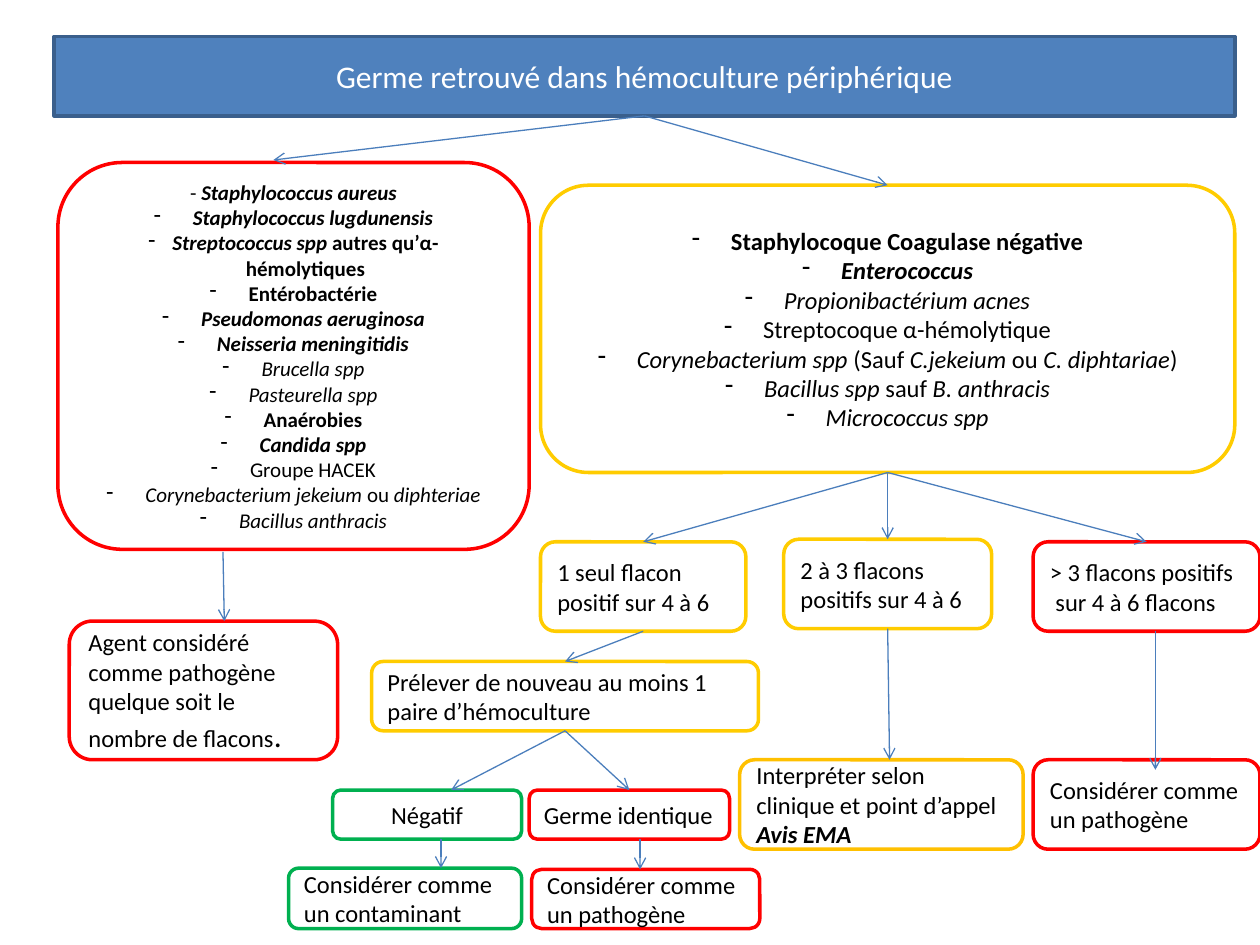
from collections import namedtuple
from lxml import etree
from pptx import Presentation
from pptx import util as u
from pptx.dml.color import RGBColor
from pptx.enum import shapes, text
from pptx.oxml.ns import qn

FONT = "Calibri"
BLUE, NAVY, ARROW = "4F81BD", "3A5F8C", "4B7EBC"
RED, YELLOW, AMBER, GREEN = "FF0000", "FFCC00", "FFC000", "00B050"
BLACK, WHITE = "000000", "FFFFFF"

Box = namedtuple("Box", "left top width height")

# Every paragraph is a list of (words, style); b is bold, i is italic
PATHOGENS = [
    [("- ", ""), ("Staphylococcus aureus", "bi")],
    [("Staphylococcus lugdunensis", "bi")],
    [("Streptococcus spp ", "bi"), ("autres qu’α-hémolytiques", "b")],
    [("Entérobactérie", "b")],
    [("Pseudomonas aeruginosa", "bi")],
    [("Neisseria meningitidis", "bi")],
    [("Brucella spp", "i")],
    [("Pasteurella spp", "i")],
    [("Anaérobies", "b")],
    [("Candida spp", "bi")],
    [("Groupe HACEK", "")],
    [("Corynebacterium jekeium ", "i"), ("ou ", ""), ("diphteriae", "i")],
    [("Bacillus anthracis", "i")],
]
PATHOGEN_INDENTS = [0, 0.31, 0.19] + [0.31] * 10
DOUBTFUL = [
    [("Staphylocoque Coagulase négative", "b")],
    [("Enterococcus", "bi")],
    [("Propionibactérium acnes", "i")],
    [("Streptocoque α-hémolytique", "")],
    [("Corynebacterium spp ", "i"), ("(Sauf ", ""), ("C.jekeium", "i"),
     (" ou ", ""), ("C. diphtariae", "i"), (")", "")],
    [("Bacillus spp ", "i"), ("sauf ", ""), ("B. anthracis", "i")],
    [("Micrococcus spp", "i")],
]


def colour(value):
    return RGBColor.from_string(value)


def emu(*lengths):
    return [u.Inches(length) for length in lengths]


def paint(shape, fill, line):
    shape.fill.solid()
    shape.fill.fore_color.rgb = colour(fill)
    shape.line.color.rgb = colour(line)
    shape.line.width = u.Pt(2)


def write(frame, paragraphs, size, ink=BLACK, centred=False):
    frame.word_wrap = True
    frame.vertical_anchor = text.MSO_ANCHOR.MIDDLE
    for index, parts in enumerate(paragraphs):
        para = frame.add_paragraph() if index else frame.paragraphs[0]
        para.alignment = text.PP_ALIGN.CENTER if centred else text.PP_ALIGN.LEFT
        para.font.name = FONT
        para.font.size = u.Pt(size)
        para.font.color.rgb = colour(ink)
        for words, style in parts:
            span = para.add_run()
            span.text = words
            if "b" in style:
                span.font.bold = True
            if "i" in style:
                span.font.italic = True


def header(page, box, words):
    title = page.shapes.title
    title.left, title.top, title.width, title.height = emu(*box)
    outline = etree.SubElement(title._element.spPr, qn("a:prstGeom"), prst="roundRect")
    etree.SubElement(outline, qn("a:avLst"))
    paint(title, BLUE, NAVY)
    write(title.text_frame, [[(words, "")]], 18, WHITE, centred=True)


def card(page, box, line, paragraphs, size=14, centred=False):
    shape = page.shapes.add_shape(
        shapes.MSO_SHAPE.ROUNDED_RECTANGLE, *emu(*box))
    shape.shadow.inherit = False
    paint(shape, WHITE, line)
    write(shape.text_frame, paragraphs, size, centred=centred)
    return shape


def germ_list(page, box, line, germs, size, indents):
    shape = card(page, box, line, germs, size, centred=True)
    for para, indent in zip(shape.text_frame.paragraphs, indents):
        if indent:
            props = para._p.get_or_add_pPr()
            props.set("marL", str(u.Inches(indent)))
            props.set("indent", str(-u.Inches(indent)))
            etree.SubElement(props, qn("a:buFontTx"))
            etree.SubElement(props, qn("a:buChar"), char="-")
            # Bullets come before the default run properties
            props.append(props.find(qn("a:defRPr")))


def top(box, x=None):
    return (box.left + box.width / 2 if x is None else x), box.top


def bottom(box, x=None):
    return top(box, x)[0], box.top + box.height


def arrow(page, start, end):
    line = page.shapes.add_connector(
        shapes.MSO_CONNECTOR.STRAIGHT, *emu(*start, *end))
    line.line.color.rgb = colour(ARROW)
    line.line.width = u.Pt(0.75)
    etree.SubElement(line.line._get_or_add_ln(), qn("a:tailEnd"), type="arrow")
    etree.SubElement(line._element.spPr, qn("a:effectLst"))


def decision_tree(page):
    head = Box(0.43, 0.29, 9.37, 0.63)
    pathogens = Box(0.46, 1.29, 3.74, 3.07)
    doubtful = Box(4.29, 1.47, 5.51, 2.28)
    one = Box(4.29, 4.3, 1.63, 0.71)
    few = Box(6.22, 4.28, 1.65, 0.71)
    many = Box(8.2, 4.3, 1.8, 0.71)
    agent = Box(0.55, 4.93, 2.13, 1.1)
    resample = Box(2.95, 5.25, 3.07, 0.55)
    interpret = Box(5.87, 6.03, 2.25, 0.71)
    many_result = Box(8.2, 6.03, 1.8, 0.71)
    negative = Box(2.64, 6.27, 1.5, 0.39)
    same = Box(4.2, 6.27, 1.59, 0.39)
    contaminant = Box(2.29, 6.89, 1.85, 0.48)
    same_result = Box(4.22, 6.9, 1.81, 0.47)

    # Title and the two groups of germs
    header(page, head, "Germe retrouvé dans hémoculture périphérique")
    germ_list(page, pathogens, RED, PATHOGENS, 12, PATHOGEN_INDENTS)
    germ_list(page, doubtful, YELLOW, DOUBTFUL, 14, [0.31] * len(DOUBTFUL))

    # Counts and outcomes
    for box, line, *lines in (
        (one, YELLOW, "1 seul flacon positif sur 4 à 6"),
        (few, YELLOW, "2 à 3 flacons positifs sur 4 à 6"),
        (many, RED, "> 3 flacons positifs", " sur 4 à 6 flacons"),
        (resample, YELLOW, "Prélever de nouveau au moins 1 paire d’hémoculture"),
        (many_result, RED, "Considérer comme un pathogène"),
        (same, RED, "Germe identique"),
        (same_result, RED, "Considérer comme un pathogène"),
        (contaminant, GREEN, "Considérer comme un contaminant"),
    ):
        card(page, box, line, [[(words, "")] for words in lines])
    card(page, negative, GREEN, [[("Négatif", "")]], centred=True)
    card(page, interpret, AMBER,
         [[("Interpréter selon clinique et point d’appel ", ""), ("Avis EMA", "bi")]])
    verdict = card(page, agent, RED, [[
        ("Agent considéré comme pathogène quelque soit le nombre de flacons", ""),
        (".", "")]])
    verdict.text_frame.paragraphs[0].runs[-1].font.size = u.Pt(18)

    # Arrows
    for start, end in (
        (bottom(head), (2.17, 1.27)),
        (bottom(head), top(doubtful)),
        ((1.77, 4.38), top(agent, 1.78)),
        (bottom(doubtful), top(one)),
        (bottom(doubtful), top(few)),
        (bottom(doubtful), top(many)),
        (bottom(one), top(resample)),
        (bottom(few), top(interpret, 7.06)),
        (bottom(many, 9.17), (9.17, 6.11)),
        (bottom(resample), top(negative, 3.58)),
        (bottom(resample), top(same)),
        (bottom(negative, 3.5), top(contaminant, 3.5)),
        (bottom(same, 5.08), top(same_result, 5.08)),
    ):
        arrow(page, start, end)


def main():
    deck = Presentation()
    deck.slide_width, deck.slide_height = emu(10, 7.5)
    page = deck.slides.add_slide(deck.slide_layouts[5])
    decision_tree(page)
    deck.save("out.pptx")


if __name__ == "__main__":
    main()
